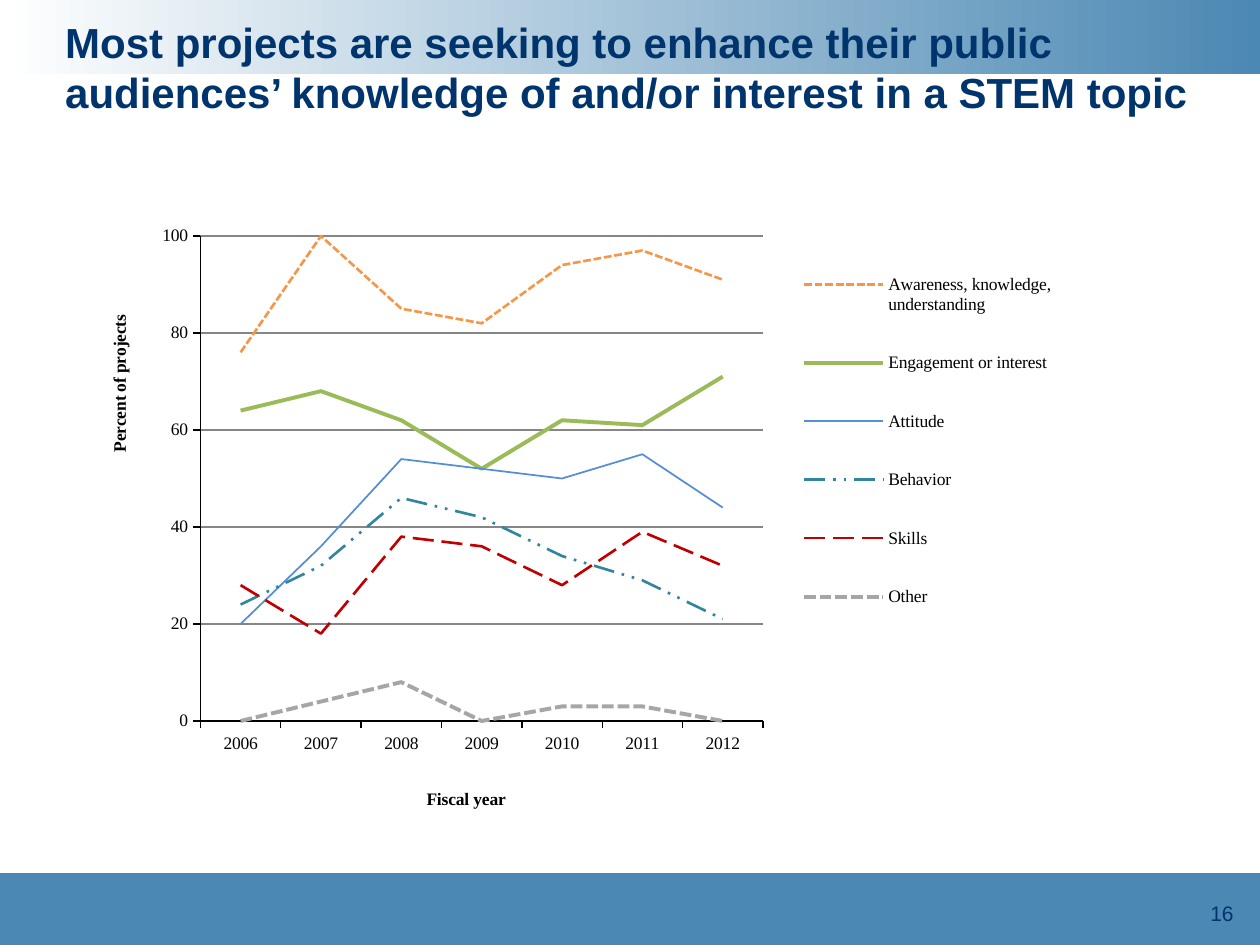
"""Builds a slide with a line chart of project outcomes by fiscal year."""
import pptx
import pptx.chart.data
import pptx.dml.color
import pptx.enum.chart
import pptx.enum.dml
import pptx.enum.shapes
import pptx.enum.text
import pptx.oxml
import pptx.oxml.ns
import pptx.util

Cm = pptx.util.Cm
Pt = pptx.util.Pt
qn = pptx.oxml.ns.qn
DASH = pptx.enum.dml.MSO_LINE

COLORS = {
    "white": "FFFFFF", "black": "000000", "navy": "00346C", "blue": "4B88B3",
    "grid": "868686", "orange": "F79646", "green": "9BBB59", "sky": "558ED5",
    "teal": "31859C", "red": "C00000", "grey": "A6A6A6",
}
YEARS = [str(year) for year in range(2006, 2013)]
SERIES = [
    ("Awareness, knowledge, understanding", [76, 100, 85, 82, 94, 97, 91],
     "orange", 1.5, DASH.SQUARE_DOT),
    ("Engagement or interest", [64, 68, 62, 52, 62, 61, 71], "green", 2.25, None),
    ("Attitude", [20, 36, 54, 52, 50, 55, 44], "sky", 1, None),
    ("Behavior", [24, 32, 46, 42, 34, 29, 21], "teal", 1.5, DASH.DASH_DOT_DOT),
    ("Skills", [28, 18, 38, 36, 28, 39, 32], "red", 1.5, DASH.LONG_DASH),
    ("Other", [0, 4, 8, 0, 3, 3, 0], "grey", 2.25, DASH.SQUARE_DOT),
]


def rgb(name):
    return pptx.dml.color.RGBColor.from_string(COLORS[name])


def set_font(font, size, color="black", name="Arial", bold=False):
    font.size, font.name, font.bold = Pt(size), name, bold
    font.color.rgb = rgb(color)


def write(tf, text, align=pptx.enum.text.PP_ALIGN.LEFT, **style):
    p = tf.paragraphs[0]
    p.alignment = align
    r = p.add_run()
    r.text = text
    set_font(r.font, **style)


def place(parent, index, x, y, w=None, h=None, inner=False):
    layout = parent.find(qn("c:layout"))
    if layout is not None:
        parent.remove(layout)
    values = [("layoutTarget", "inner")] if inner else []
    values += [("xMode", "edge"), ("yMode", "edge"), ("x", x), ("y", y)]
    if w is not None:
        values += [("w", w), ("h", h)]
    body = "".join(f'<c:{tag} val="{val}"/>' for tag, val in values)
    parent.insert(index, pptx.oxml.parse_xml(
        f'<c:layout {pptx.oxml.ns.nsdecls("c")}>'
        f"<c:manualLayout>{body}</c:manualLayout></c:layout>"))


class Deck:
    def __init__(self, prs):
        self.prs = prs
        self.chart_font = "Times New Roman"
        self.s = prs.slides.add_slide(prs.slide_layouts[5])

    def band(self, top, height, gradient=False):
        sp = self.s.shapes.add_shape(pptx.enum.shapes.MSO_SHAPE.RECTANGLE,
                                     0, Cm(top), self.prs.slide_width, Cm(height))
        sp.shadow.inherit = False
        sp.line.fill.background()
        if gradient:
            sp.fill.gradient()
            sp.fill.gradient_angle = 0
            for stop, color, position in zip(sp.fill.gradient_stops, ("white", "blue"), (0, 1)):
                stop.color.rgb = rgb(color)
                stop.position = position
        else:
            sp.fill.solid()
            sp.fill.fore_color.rgb = rgb("blue")

    def title(self, text, x, y, w, h):
        sp = self.s.shapes.title
        self.s.shapes.element.append(sp.element)
        sp.left, sp.top, sp.width, sp.height = Cm(x), Cm(y), Cm(w), Cm(h)
        tf = sp.text_frame
        tf.word_wrap = True
        tf.auto_size = pptx.enum.text.MSO_AUTO_SIZE.NONE
        tf.vertical_anchor = pptx.enum.text.MSO_ANCHOR.TOP
        write(tf, text, size=24, color="navy", bold=True)

    def page_number(self, text, x, y, w, h):
        tf = self.s.shapes.add_textbox(Cm(x), Cm(y), Cm(w), Cm(h)).text_frame
        tf.word_wrap = True
        tf.vertical_anchor = pptx.enum.text.MSO_ANCHOR.MIDDLE
        write(tf, text, pptx.enum.text.PP_ALIGN.RIGHT, size=12, color="navy")

    def axis(self, axis, text, x, y):
        axis.format.line.color.rgb = rgb("black")
        axis.format.line.width = Pt(0.75)
        axis.major_tick_mark = pptx.enum.chart.XL_TICK_MARK.OUTSIDE
        write(axis.axis_title.text_frame, text, pptx.enum.text.PP_ALIGN.CENTER,
              size=10, name=self.chart_font, bold=True)
        place(axis.axis_title.element, 1, x, y)

    def line_chart(self, x, y, w, h):
        data = pptx.chart.data.CategoryChartData()
        data.categories = YEARS
        for name, values, *_ in SERIES:
            data.add_series(name, values)
        chart = self.s.shapes.add_chart(pptx.enum.chart.XL_CHART_TYPE.LINE,
                                        Cm(x), Cm(y), Cm(w), Cm(h), data).chart
        chart.has_title = False
        set_font(chart.font, 10, name=self.chart_font)
        chart.plots[0].vary_by_categories = False
        for series, (_, _, color, width, dash) in zip(chart.plots[0].series, SERIES):
            series.smooth = False
            series.format.line.color.rgb = rgb(color)
            series.format.line.width = Pt(width)
            if dash:
                series.format.line.dash_style = dash
        self.axis(chart.category_axis, "Fiscal year", 0.31, 0.91)
        value_axis = chart.value_axis
        self.axis(value_axis, "Percent of projects", 0.01, 0.16)
        value_axis.minimum_scale, value_axis.maximum_scale = 0, 100
        value_axis.major_unit = 20
        value_axis.has_major_gridlines = True
        grid = value_axis.major_gridlines.format.line
        grid.color.rgb = rgb("grid")
        grid.width = Pt(0.75)
        chart.has_legend = True
        chart.legend.position = pptx.enum.chart.XL_LEGEND_POSITION.RIGHT
        chart.legend.include_in_layout = False
        legend = chart.element.find(".//" + qn("c:legend"))
        place(legend, 1, 0.66, 0.04, 0.25, 0.65)
        plot_area = chart.element.find(".//" + qn("c:plotArea"))
        place(plot_area, 0, 0.1, 0.04, 0.53, 0.77, inner=True)


def main():
    prs = pptx.Presentation()
    prs.slide_width, prs.slide_height = Cm(25.4), Cm(19.05)
    deck = Deck(prs)
    deck.band(0, 1.5, gradient=True)
    deck.band(17.6, 1.45)
    deck.title("Most projects are seeking to enhance their public audiences’ "
               "knowledge of and/or interest in a STEM topic", 1.06, 0.2, 24.34, 1.85)
    deck.page_number("16", 23.77, 17.95, 1.35, 0.9)
    deck.line_chart(1.9, 4.25, 21.4, 12.7)
    prs.save("out.pptx")


if __name__ == "__main__":
    main()
